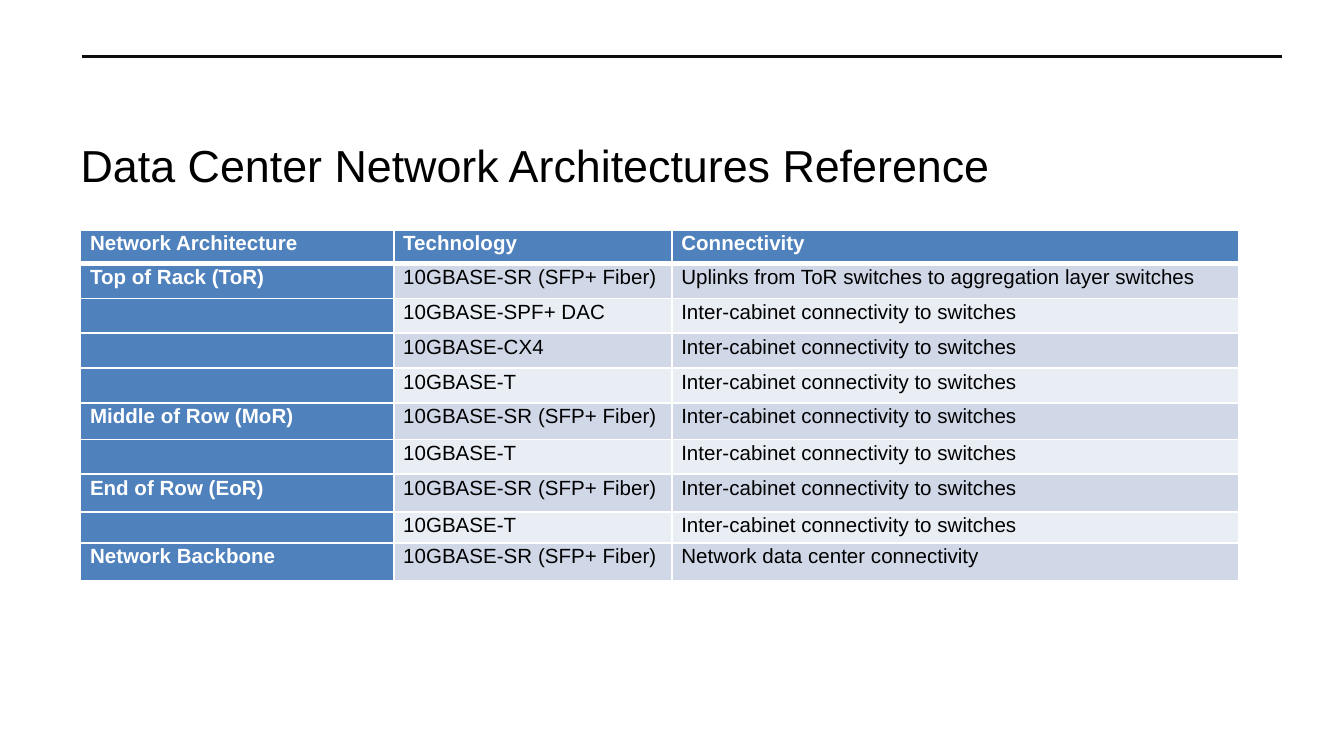
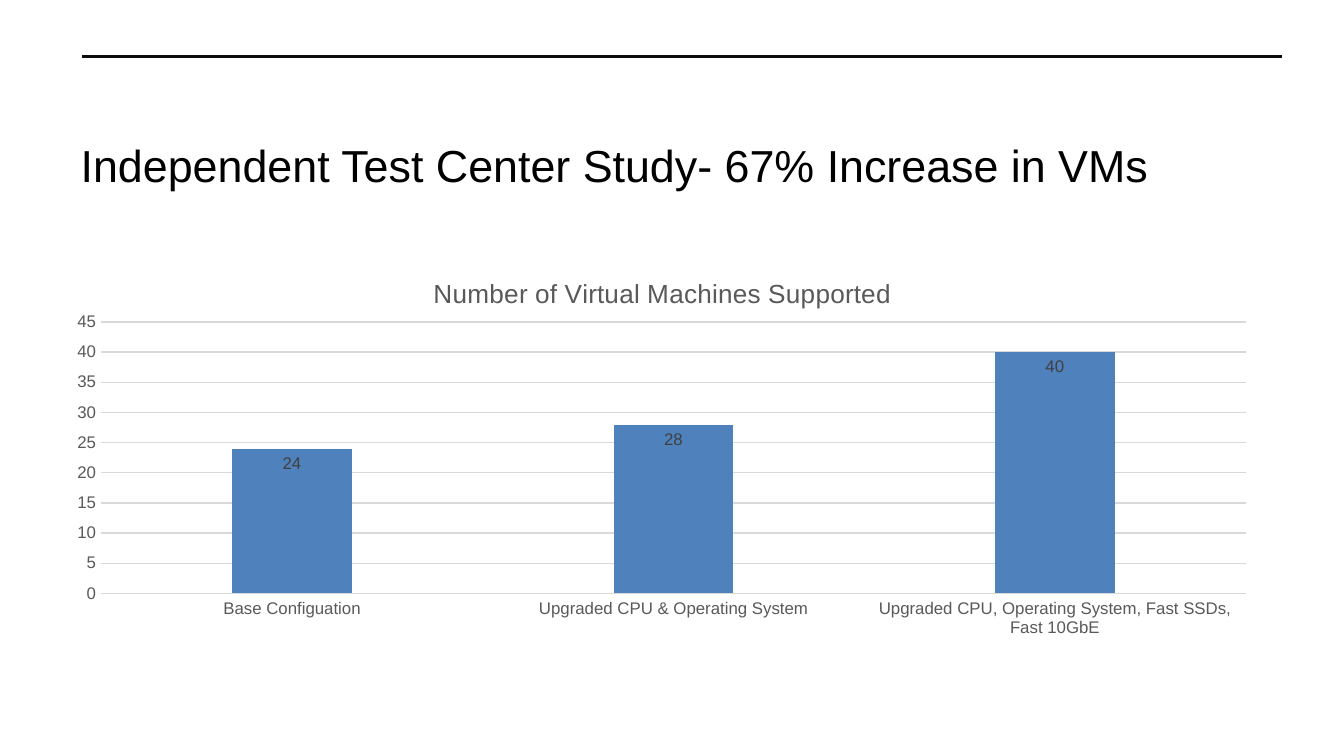
from dataclasses import dataclass

from lxml.etree import SubElement
from pptx import Presentation
from pptx.chart.data import CategoryChartData
from pptx.dml.color import RGBColor
from pptx.enum.chart import XL_CHART_TYPE as ChartType
from pptx.enum.chart import XL_LABEL_POSITION as LabelPos
from pptx.enum.chart import XL_TICK_MARK as Tick
from pptx.enum.shapes import MSO_CONNECTOR as Connector
from pptx.enum.text import MSO_ANCHOR as Anchor
from pptx.enum.text import MSO_AUTO_SIZE as AutoSize
from pptx.enum.text import PP_ALIGN as Align
from pptx.oxml import parse_xml
from pptx.oxml.ns import nsdecls, qn
from pptx.util import Inches, Pt


@dataclass(frozen=True)
class Theme:
    """Colours, type sizes and font of the deck."""
    font: str = "Arial"
    ink: str = "000000"
    paper: str = "FFFFFF"
    rule: str = "0D0D0D"
    accent: str = "4F81BD"
    bands: tuple = ("D0D8E8", "E9EDF4")
    muted: str = "595959"
    label: str = "404040"
    grid: str = "D9D9D9"
    title_pt: int = 24
    chart_title_pt: int = 14
    cell_pt: int = 11
    axis_pt: int = 9


@dataclass(frozen=True)
class Box:
    """A region in grid columns and rows, each a tenth of an inch."""
    col: float
    row: float
    cols: float
    rows: float

    def place(self):
        """Return left, top, width and height as lengths."""
        return tuple(unit(n) for n in (self.col, self.row, self.cols, self.rows))


THEME = Theme()
SLIDE = Box(0, 0, 100, 56.25)
RULE = Box(6.1, 4.2, 89.3, 0)
TITLE = Box(5, 7.4, 90, 9.7)
TABLE = Box(6, 17.1, 86.2, 26)
CHART = Box(4.3, 19.1, 90, 29.7)
COL_GRID = (23.3, 20.7, 42.2)
ROW_GRID = (2.5, 2.6, 2.6, 2.6, 2.6, 2.7, 2.6, 2.8, 2.3, 2.8)

FIBER, COPPER = "10GBASE-SR (SFP+ Fiber)", "10GBASE-T"
INTER = "Inter-cabinet connectivity to switches"
ARCHITECTURES = (
    ("Network Architecture", "Technology", "Connectivity"),
    ("Top of Rack (ToR)", FIBER, "Uplinks from ToR switches to aggregation layer switches"),
    ("", "10GBASE-SPF+ DAC", INTER),
    ("", "10GBASE-CX4", INTER),
    ("", COPPER, INTER),
    ("Middle of Row (MoR)", FIBER, INTER),
    ("", COPPER, INTER),
    ("End of Row (EoR)", FIBER, INTER),
    ("", COPPER, INTER),
    ("Network Backbone", FIBER, "Network data center connectivity"),
)
VM_COUNTS = {
    "Base Configuation": 24,
    "Upgraded CPU & Operating System": 28,
    "Upgraded CPU, Operating System, Fast SSDs, Fast 10GbE": 40,
}


def unit(n):
    """Turn grid units into a length."""
    return Inches(n / 10)


def rgb(color):
    """Turn a hex string into a colour."""
    return RGBColor.from_string(color)


def style(font, size, color=THEME.ink, bold=False):
    """Set the face, size, colour and weight of a font."""
    font.name, font.size, font.bold = THEME.font, Pt(size), bold
    font.color.rgb = rgb(color)


def write(tf, text, size, align=None, spacing=None, **fmt):
    """Write one formatted paragraph into a text frame."""
    p = tf.paragraphs[0]
    p.alignment, p.line_spacing = align, spacing
    if text:
        r = p.add_run()
        r.text = text
        style(r.font, size, **fmt)
    else:
        SubElement(p._p, qn("a:endParaRPr"), sz=str(size * 100))


def add_rule(slide, layout, box):
    """Draw the top rule and hand it to the layout."""
    x, y, w, _ = box.place()
    line = slide.shapes.add_connector(Connector.STRAIGHT, x, y, x + w, y)
    line.line.color.rgb, line.line.width = rgb(THEME.rule), Pt(2)
    SubElement(line.element.spPr, qn("a:effectLst"))
    layout.shapes.element.append(line.element)


def add_title(slide, box, text):
    """Place and format the title placeholder."""
    sp = slide.shapes.title
    sp.left, sp.top, sp.width, sp.height = box.place()
    tf = sp.text_frame
    tf.word_wrap, tf.auto_size = True, AutoSize.NONE
    tf.vertical_anchor = Anchor.MIDDLE
    write(tf, text, THEME.title_pt, align=Align.LEFT)


def add_borders(cell, **widths):
    """Draw paper-coloured borders, one point unless a side says otherwise."""
    tcPr = cell._tc.get_or_add_tcPr()
    for side in "LRTB":
        tcPr.append(parse_xml(
            f'<a:ln{side} {nsdecls("a")} w="{Pt(widths.get(side, 1))}"><a:solidFill>'
            f'<a:srgbClr val="{THEME.paper}"/></a:solidFill></a:ln{side}>'))


def fill_cell(cell, i, j, text):
    """Format one table cell by its row and column."""
    head = i == 0 or j == 0
    cell.margin_left = cell.margin_right = Inches(0.07)
    cell.margin_top = cell.margin_bottom = 0
    add_borders(cell, **{0: {"B": 3}, 1: {"T": 3}}.get(i, {}))
    cell.fill.solid()
    cell.fill.fore_color.rgb = rgb(THEME.accent if head else THEME.bands[(i - 1) % 2])
    write(cell.text_frame, text, THEME.cell_pt, spacing=1.1, bold=head,
          color=THEME.paper if head else THEME.ink)


def add_grid_table(slide, box, data):
    """Build the table of architectures."""
    table = slide.shapes.add_table(len(data), len(data[0]), *box.place()).table
    table.first_col = True
    for col, width in zip(table.columns, COL_GRID):
        col.width = unit(width)
    for row, height in zip(table.rows, ROW_GRID):
        row.height = unit(height)
    for i, texts in enumerate(data):
        for j, text in enumerate(texts):
            fill_cell(table.cell(i, j), i, j, text)


def set_plot_area(chart, **shares):
    """Fix the inner plot area as shares of the chart."""
    area = chart._chartSpace.chart.plotArea
    for old in area.findall(qn("c:layout")):
        area.remove(old)
    sides = "".join(f'<c:{k} val="{v}"/>' for k, v in shares.items())
    area.insert(0, parse_xml(
        f'<c:layout {nsdecls("c")}><c:manualLayout><c:layoutTarget val="inner"/>'
        f'<c:xMode val="edge"/><c:yMode val="edge"/>{sides}</c:manualLayout></c:layout>'))


def format_axes(chart):
    """Format the category and value axes."""
    cat, val = chart.category_axis, chart.value_axis
    for axis in (cat, val):
        axis.major_tick_mark = axis.minor_tick_mark = Tick.NONE
        style(axis.tick_labels.font, THEME.axis_pt, THEME.muted)
    val.minimum_scale, val.maximum_scale, val.major_unit = 0, 45, 5
    val.format.line.fill.background()
    for line in (cat.format.line, val.major_gridlines.format.line):
        line.color.rgb, line.width = rgb(THEME.grid), Pt(0.75)


def add_column_chart(slide, box, title, values):
    """Build the column chart with labels inside the bars."""
    data = CategoryChartData()
    data.categories = list(values)
    data.add_series("Series 1", list(values.values()))
    chart = slide.shapes.add_chart(ChartType.COLUMN_CLUSTERED, *box.place(), data).chart
    style(chart.font, 10)
    chart.has_legend = False
    chart.has_title = True
    write(chart.chart_title.text_frame, title, THEME.chart_title_pt, color=THEME.muted)
    chart.chart_title.include_in_layout = False
    format_axes(chart)
    plot = chart.plots[0]
    plot.gap_width, plot.overlap, plot.vary_by_categories = 219, -27, False
    fill = plot.series[0].format.fill
    fill.solid()
    fill.fore_color.rgb = rgb(THEME.accent)
    labels = plot.series[0].data_labels
    labels.show_value, labels.position = True, LabelPos.INSIDE_END
    style(labels.font, THEME.axis_pt, THEME.label)
    set_plot_area(chart, x=0.036, y=0.164, w=0.946, h=0.68)


def main():
    """Build and save the deck."""
    prs = Presentation()
    _, _, prs.slide_width, prs.slide_height = SLIDE.place()
    layout = prs.slide_layouts[5]
    table_slide, chart_slide = (prs.slides.add_slide(layout) for _ in range(2))
    add_rule(table_slide, layout, RULE)
    add_title(table_slide, TITLE, "Data Center Network Architectures Reference")
    add_grid_table(table_slide, TABLE, ARCHITECTURES)
    add_title(chart_slide, TITLE, "Independent Test Center Study- 67% Increase in VMs")
    add_column_chart(chart_slide, CHART, "Number of Virtual Machines Supported", VM_COUNTS)
    prs.save("out.pptx")


if __name__ == "__main__":
    main()
